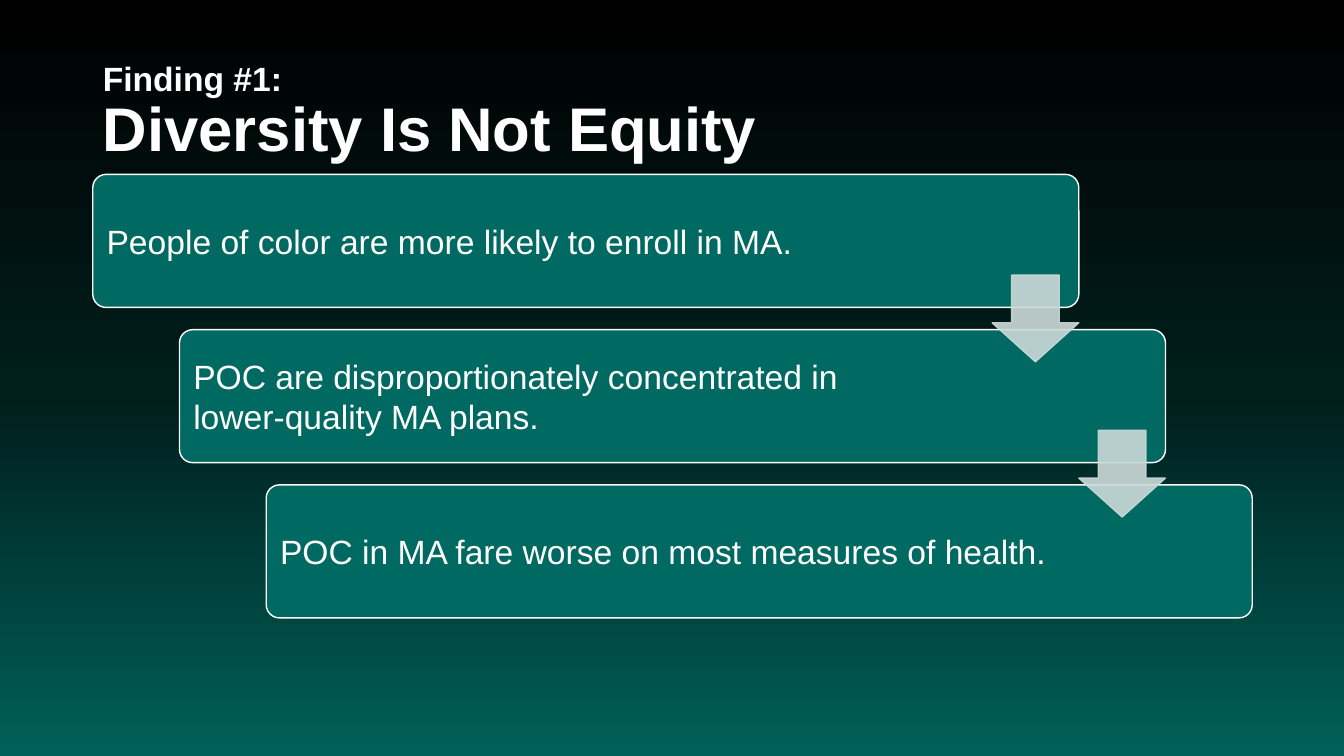
from copy import deepcopy
from dataclasses import dataclass

from lxml import etree
from pptx import Presentation
from pptx import util as u
from pptx.dml.color import RGBColor
from pptx.enum import shapes, text
from pptx.oxml.ns import qn


@dataclass(frozen=True)
class Theme:
    font: str = "Arial"
    ink: str = "FFFFFF"
    panel: str = "006961"
    arrow: str = "CCDAD8"
    arrow_alpha: int = 90
    backdrop: tuple = ((0, "000000"), (52, "001E1C"), (100, "006059"))
    body_size: int = 24
    headline_size: int = 44


THEME = Theme()
WIDTH, HEIGHT = 13.33, 7.5

# Staircase grid: each step moves one column right and one row down
LEFT, TOP = 0.92, 1.73
COLUMN, ROW = 0.86, 1.54
STEP_WIDTH, STEP_HEIGHT = 9.78, 1.32
ARROW_SIZE, ARROW_DROP = 0.86, 1.0
TEXT_INSET, ARROW_CLEARANCE = 0.1, 1.3

FINDINGS = [
    ["People of color are more likely to enroll in MA."],
    ["POC are disproportionately concentrated in", "lower-quality MA plans."],
    ["POC in MA fare worse on most measures of health."],
]


def color(value):
    return RGBColor.from_string(value)


def style_font(font, size, bold=False):
    font.name = THEME.font
    font.size = u.Pt(size)
    font.bold = bold
    font.color.rgb = color(THEME.ink)


def set_backdrop(slide):
    fill = slide.background.fill
    fill.gradient()
    fill.gradient_angle = 270  # dark at the top, teal at the bottom
    stops = slide.background._cSld.find(".//" + qn("a:gsLst"))
    for stop in list(stops):
        stops.remove(stop)
    for position, value in THEME.backdrop:
        stop = etree.SubElement(stops, qn("a:gs"), pos=str(position * 1000))
        etree.SubElement(stop, qn("a:srgbClr"), val=value)


def add_headline(slide, kicker, headline):
    title = slide.shapes.title
    title.left, title.top = u.Inches(LEFT), u.Inches(0.4)
    title.width, title.height = u.Inches(11.5), u.Inches(1.45)
    frame = title.text_frame
    frame.auto_size = text.MSO_AUTO_SIZE.NONE
    frame.vertical_anchor = text.MSO_ANCHOR.MIDDLE
    line = frame.paragraphs[0]
    line.alignment = text.PP_ALIGN.LEFT
    line.line_spacing = 0.9

    opening = line.add_run()
    opening.text = kicker
    style_font(opening.font, THEME.body_size, bold=True)
    # The line break takes the kicker's size
    line.add_line_break()
    line._p.find(qn("a:br")).append(deepcopy(opening._r.rPr))
    main_line = line.add_run()
    main_line.text = headline
    style_font(main_line.font, THEME.headline_size, bold=True)


def add_block(slide, preset, box, adjustments, fill, line):
    block = slide.shapes.add_shape(preset, *map(u.Inches, box))
    block.shadow.inherit = False
    for index, value in enumerate(adjustments):
        block.adjustments[index] = value
    block.fill.solid()
    block.fill.fore_color.rgb = color(fill)
    block.line.color.rgb = color(line)
    block.line.width = u.Pt(1)
    return block


def add_step(slide, index, sentences):
    box = (LEFT + index * COLUMN, TOP + index * ROW, STEP_WIDTH, STEP_HEIGHT)
    step = add_block(slide, shapes.MSO_SHAPE.ROUNDED_RECTANGLE, box, [0.1],
                     THEME.panel, THEME.ink)
    frame = step.text_frame
    frame.word_wrap = True
    frame.vertical_anchor = text.MSO_ANCHOR.MIDDLE
    frame.margin_left = frame.margin_top = frame.margin_bottom = u.Inches(TEXT_INSET)
    frame.margin_right = u.Inches(ARROW_CLEARANCE)
    frame.text = "\n".join(sentences)
    for sentence in frame.paragraphs:
        sentence.alignment = text.PP_ALIGN.LEFT
        style_font(sentence.font, THEME.body_size)


def add_step_arrow(slide, index):
    # Right-aligned with its step, bridging the gap to the next one
    box = (LEFT + index * COLUMN + STEP_WIDTH - ARROW_SIZE,
           TOP + index * ROW + ARROW_DROP, ARROW_SIZE, ARROW_SIZE)
    arrow = add_block(slide, shapes.MSO_SHAPE.DOWN_ARROW, box, [0.55, 0.45],
                      THEME.arrow, THEME.arrow)
    for shade in arrow._element.spPr.iter(qn("a:srgbClr")):
        etree.SubElement(shade, qn("a:alpha"), val=str(THEME.arrow_alpha * 1000))


def main():
    deck = Presentation()
    deck.slide_width, deck.slide_height = u.Inches(WIDTH), u.Inches(HEIGHT)
    slide = deck.slides.add_slide(deck.slide_layouts.get_by_name("Title Only"))
    set_backdrop(slide)
    add_headline(slide, "Finding #1:", "Diversity Is Not Equity")

    # Steps first, so that the arrows lie on top
    for index, sentences in enumerate(FINDINGS):
        add_step(slide, index, sentences)
    for index in range(len(FINDINGS) - 1):
        add_step_arrow(slide, index)

    deck.save("out.pptx")


if __name__ == "__main__":
    main()
